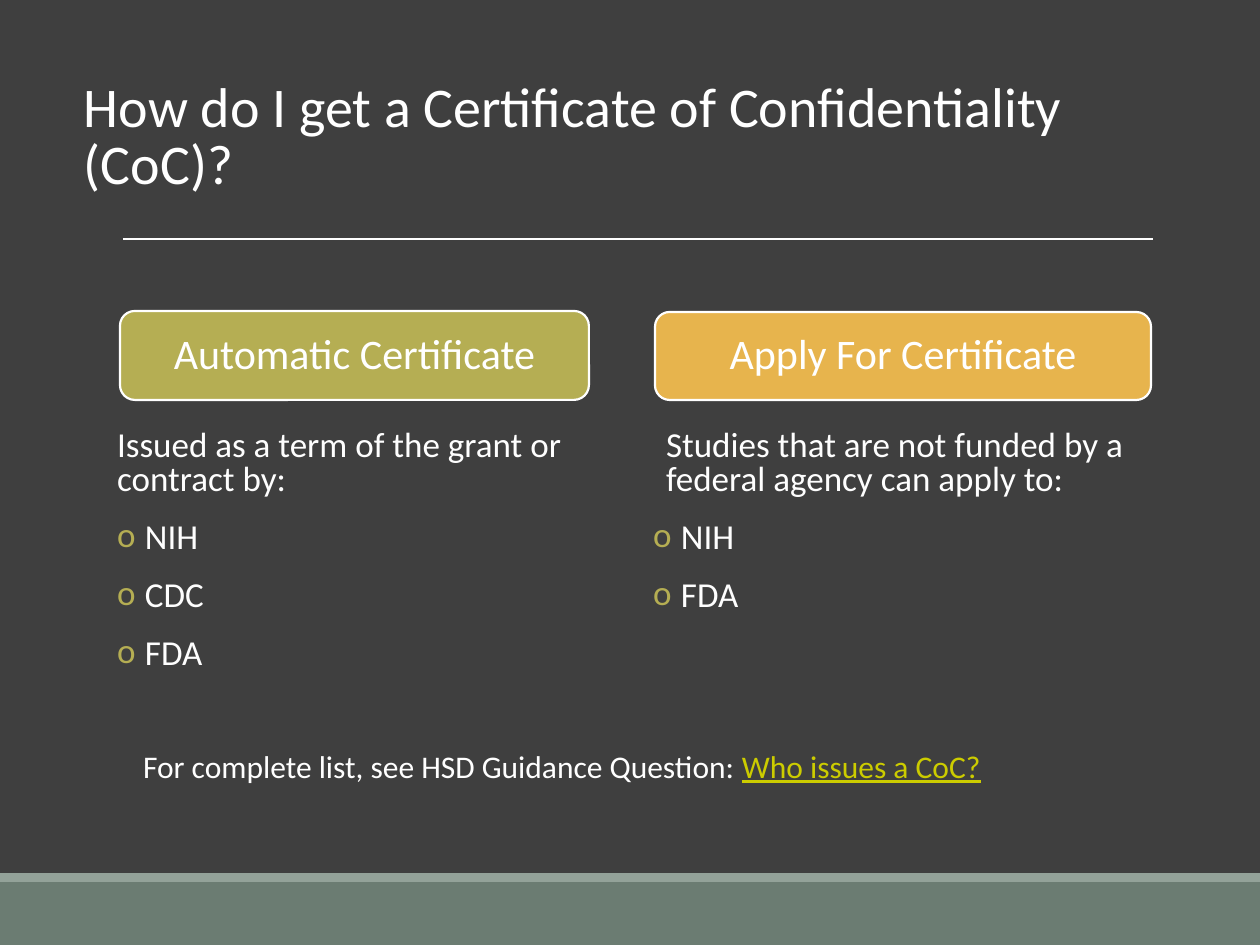
import pptx
import pptx.dml.color
import pptx.enum.shapes
import pptx.enum.text
import pptx.oxml
import pptx.oxml.ns
import pptx.util

RGB = pptx.dml.color.RGBColor
CHARCOAL = RGB(0x3F, 0x3F, 0x3F)
SAGE = RGB(0x6B, 0x7C, 0x72)
PALE_SAGE = RGB(0x93, 0xA2, 0x99)
OLIVE = RGB(0xB5, 0xAE, 0x53)
AMBER = RGB(0xE7, 0xB4, 0x4D)
WHITE = RGB(0xFF, 0xFF, 0xFF)
OFF_WHITE = RGB(0xFE, 0xFE, 0xFE)
LINK_YELLOW = RGB(0xCC, 0xCC, 0x00)

FONT = "Calibri"
EMU_PER_PX = 914400 / 126
ANCHOR = pptx.enum.text.MSO_ANCHOR
ALIGN = pptx.enum.text.PP_ALIGN
AUTOSIZE = pptx.enum.text.MSO_AUTO_SIZE
SHAPE = pptx.enum.shapes.MSO_SHAPE


def px(length):
    return pptx.util.Emu(round(length * EMU_PER_PX))


def apply(target, formats):
    for name, value in formats.items():
        setattr(target, name, value)


class SlideStyle:
    """Holds the slide and draws each kind of element on it."""

    def __init__(self, slide):
        self.slide = slide
        slide.background.fill.solid()
        slide.background.fill.fore_color.rgb = CHARCOAL

    def frame(self, shape, margin_x, margin_y, anchor):
        apply(shape.text_frame, {
            "word_wrap": True, "auto_size": AUTOSIZE.NONE,
            "vertical_anchor": anchor,
            "margin_left": px(margin_x), "margin_right": px(margin_x),
            "margin_top": px(margin_y), "margin_bottom": px(margin_y)})
        return shape.text_frame

    def run(self, paragraph, text, size, color=WHITE, underline=None):
        run = paragraph.add_run()
        run.text = text
        apply(run.font, {"name": FONT, "size": pptx.util.Pt(size),
                         "underline": underline})
        run.font.color.rgb = color

    def title(self, box, text):
        heading = self.slide.shapes.title
        apply(heading, dict(zip(("left", "top", "width", "height"), map(px, box))))
        paragraph = self.frame(heading, 13, 6, ANCHOR.BOTTOM).paragraphs[0]
        apply(paragraph, {"alignment": ALIGN.LEFT, "line_spacing": 0.85})
        self.run(paragraph, text, 32)

    def panel(self, kind, box, fill, outline=None):
        panel = self.slide.shapes.add_shape(kind, *map(px, box))
        panel.shadow.inherit = False
        panel.fill.solid()
        panel.fill.fore_color.rgb = fill
        if outline is None:
            panel.line.fill.background()
        else:
            panel.line.color.rgb = outline
            panel.line.width = pptx.util.Pt(1.25)
        return panel

    def header(self, box, text, fill):
        header = self.panel(SHAPE.ROUNDED_RECTANGLE, box, fill, WHITE)
        paragraph = self.frame(header, 13, 13, ANCHOR.MIDDLE).paragraphs[0]
        apply(paragraph, {"alignment": ALIGN.CENTER, "line_spacing": 0.9})
        self.run(paragraph, text, 24)

    def rule(self, left, right, y):
        rule = self.slide.shapes.add_connector(
            pptx.enum.shapes.MSO_CONNECTOR.STRAIGHT, px(left), px(y), px(right), px(y))
        rule.line.color.rgb = OFF_WHITE
        rule.line.width = pptx.util.Pt(0.75)
        pptx.oxml.ns.qn("a:effectLst")
        rule._element.spPr.append(self.element("<a:effectLst {ns}/>"))

    def text_box(self, box, margin_x):
        text_box = self.slide.shapes.add_textbox(*map(px, box))
        return self.frame(text_box, margin_x, 6, ANCHOR.TOP)

    def agency_list(self, box, lead, lead_indent, agencies):
        frame = self.text_box(box, 0)
        opening = frame.paragraphs[0]
        opening.line_spacing = 0.8
        opening._p.get_or_add_pPr().set("marL", str(px(lead_indent)))
        self.run(opening, lead, 20, OFF_WHITE)
        for agency in agencies:
            item = frame.add_paragraph()
            apply(item, {"line_spacing": 0.8, "space_before": pptx.util.Pt(14)})
            self.bullet(item)
            self.run(item, agency, 20, OFF_WHITE)

    def bullet(self, paragraph, hang=28):
        properties = paragraph._p.get_or_add_pPr()
        properties.set("marL", str(px(hang)))
        properties.set("indent", str(-px(hang)))
        properties.append(self.element(
            f'<a:buClr {{ns}}><a:srgbClr val="{OLIVE}"/></a:buClr>'))
        properties.append(self.element(f'<a:buFont {{ns}} typeface="{FONT}"/>'))
        properties.append(self.element('<a:buChar {ns} char="o"/>'))

    @staticmethod
    def element(xml):
        return pptx.oxml.parse_xml(xml.format(ns=pptx.oxml.ns.nsdecls("a")))


def main():
    deck = pptx.Presentation()
    apply(deck, {"slide_width": px(1260), "slide_height": px(945)})
    page = SlideStyle(deck.slides.add_slide(deck.slide_layouts[5]))

    # Footer bands and title rule
    page.panel(SHAPE.RECTANGLE, (0, 882, 1260, 63), SAGE)
    page.panel(SHAPE.RECTANGLE, (0, 873, 1260, 9), PALE_SAGE)
    page.rule(123, 1153, 239)

    page.title((71, 77, 1119, 125),
               "How do I get a Certificate of Confidentiality (CoC)?")

    # Automatic route
    page.header((120, 311, 469, 89), "Automatic Certificate", OLIVE)
    page.agency_list((117, 425, 500, 268),
                     "Issued as a term of the grant or contract by:", 0,
                     ("NIH", "CDC", "FDA"))

    # Application route
    page.header((655, 312, 496, 88), "Apply For Certificate", AMBER)
    page.agency_list((653, 425, 500, 202),
                     "Studies that are not funded by a federal agency can apply to:",
                     13, ("NIH", "FDA"))

    # Pointer to the guidance
    guidance = page.text_box((130, 741, 1000, 50), 13).paragraphs[0]
    page.run(guidance, "For complete list, see HSD Guidance Question: ", 18)
    page.run(guidance, "Who issues a CoC?", 18, LINK_YELLOW, underline=True)

    deck.save("out.pptx")


if __name__ == "__main__":
    main()
